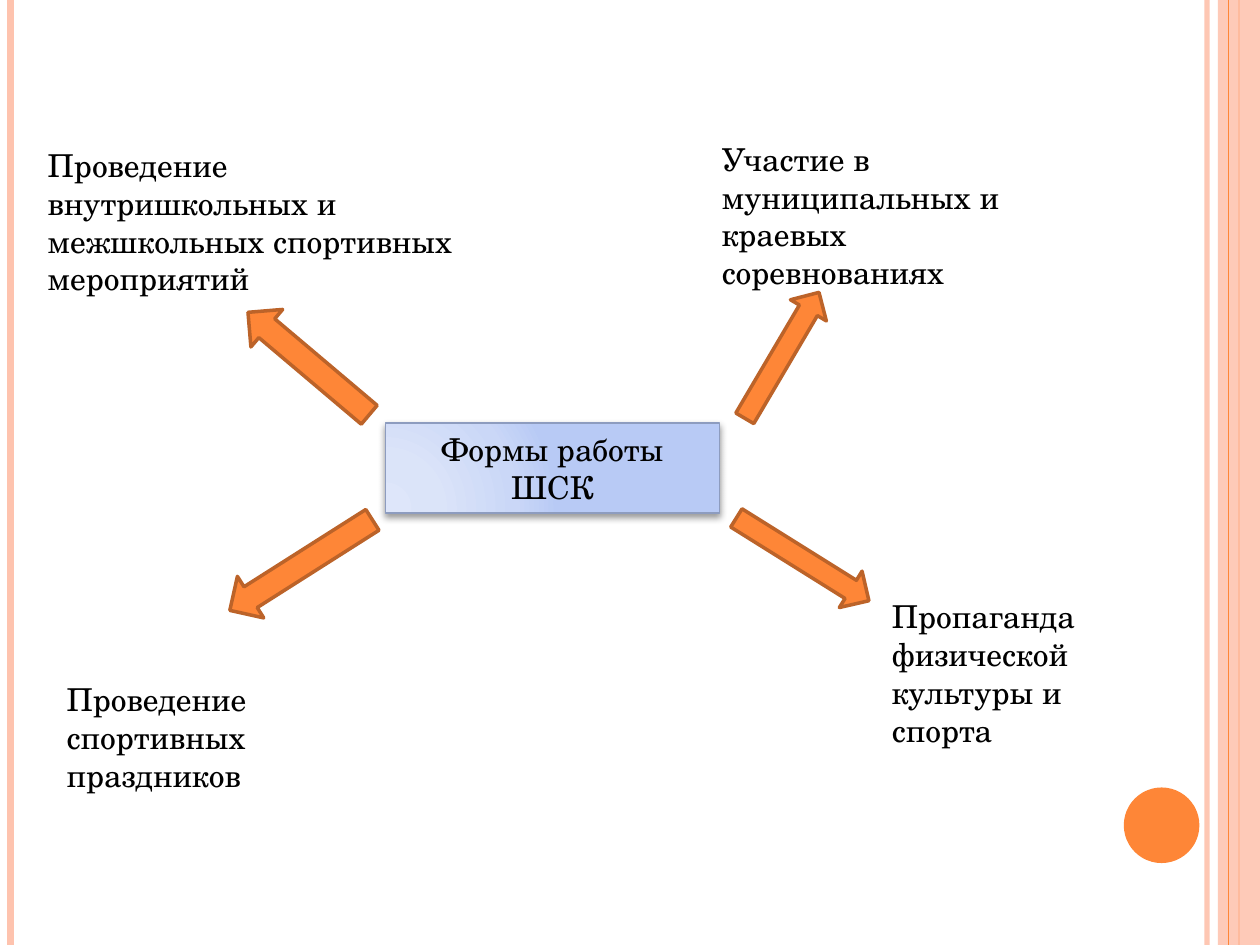
from lxml import etree
from pptx import Presentation
from pptx.dml.color import RGBColor
from pptx.enum.shapes import MSO_CONNECTOR, MSO_SHAPE
from pptx.enum.text import MSO_ANCHOR, MSO_AUTO_SIZE, PP_ALIGN
from pptx.oxml import parse_xml
from pptx.oxml.ns import nsdecls, qn
from pptx.util import Pt

LINE = MSO_CONNECTOR.STRAIGHT
RECT, OVAL = MSO_SHAPE.RECTANGLE, MSO_SHAPE.OVAL
RIGHT, DOWN = MSO_SHAPE.RIGHT_ARROW, MSO_SHAPE.DOWN_ARROW
MIDDLE, FIT = MSO_ANCHOR.MIDDLE, MSO_AUTO_SIZE.SHAPE_TO_FIT_TEXT
LEFT, CENTER = PP_ALIGN.LEFT, PP_ALIGN.CENTER

PINK = RGBColor(0xFE, 0xC3, 0xAE)
ORANGE = RGBColor(0xFE, 0x86, 0x37)
BROWN = RGBColor(0xBC, 0x63, 0x29)
STEEL = RGBColor(0x8D, 0x9C, 0xBF)
BLACK = RGBColor(0, 0, 0)
BLUES = [
    (0, RGBColor(0xDE, 0xE6, 0xFA)),
    (30, RGBColor(0xDB, 0xE4, 0xF9)),
    (75, RGBColor(0xCA, 0xD7, 0xF7)),
    (100, RGBColor(0xB8, 0xCA, 0xF5)),
]
FONT = "TeX Gyre Schola"
WIDTH, HEIGHT = 720, 540

# Left, top, width, height in points
TEXTS = [
    ("Участие в муниципальных и краевых соревнованиях",
     (405.4, 76.3, 195, 94.3)),
    ("Пропаганда физической культуры и спорта",
     (502.6, 337.7, 129.6, 94.3)),
    ("Проведение внутришкольных и межшкольных спортивных мероприятий",
     (20.2, 79.9, 254.9, 96.5)),
    ("Проведение спортивных праздников",
     (31, 385.2, 203.8, 72.7)),
]
# Kind, box, turn in degrees
ARROWS = [
    (RIGHT, (414, 307.4, 89.3, 24.5), 32),
    (DOWN, (434.9, 161.3, 23.8, 83.5), 210.5),
    (RIGHT, (131, 193.7, 90.7, 28.1), 220.2),
    (RIGHT, (123.8, 308.9, 96.5, 28.1), 147.6),
]


def set_alpha(node, percent):
    """Set the opacity of the first plain colour inside node."""
    color = next(node.iter(qn("a:srgbClr")))
    etree.SubElement(color, qn("a:alpha"), val=str(percent * 1000))


def add_rule(slide, x, color, width, alpha=None):
    """Draw a vertical line over the full slide height."""
    rule = slide.shapes.add_connector(LINE, Pt(x), Pt(0), Pt(x), Pt(HEIGHT))
    rule.line.color.rgb = color
    rule.line.width = Pt(width)
    props = rule._element.spPr
    if alpha:
        set_alpha(props, alpha)
    etree.SubElement(props, qn("a:effectLst"))


def add_shape(slide, kind, box, fill, edge=None, width=0, turn=0):
    shape = slide.shapes.add_shape(kind, *map(Pt, box))
    shape.shadow.inherit = False
    shape.rotation = turn
    shape.fill.solid()
    shape.fill.fore_color.rgb = fill
    if edge is None:
        shape.line.fill.background()
    else:
        shape.line.color.rgb = edge
        shape.line.width = Pt(width)
    return shape


def write(shape, text, align):
    frame = shape.text_frame
    frame.word_wrap = True
    frame.auto_size = FIT
    para = frame.paragraphs[0]
    para.alignment = align
    run = para.add_run()
    run.text = text
    run.font.size = Pt(18)
    run.font.name = FONT
    run.font.color.rgb = BLACK


def add_text(slide, text, box):
    write(slide.shapes.add_textbox(*map(Pt, box)), text, LEFT)


def add_center(slide):
    """Add the middle box with its round gradient and soft shadow."""
    box = add_shape(slide, RECT, (220.3, 241.9, 190.8, 51.1),
                    BLUES[-1][1], STEEL, 1)
    stops = "".join(
        f'<a:gs pos="{pos * 1000}"><a:srgbClr val="{color}"/></a:gs>'
        for pos, color in BLUES)
    grad = parse_xml(
        f'<a:gradFill {nsdecls("a")} rotWithShape="1">'
        f'<a:gsLst>{stops}</a:gsLst><a:path path="circle">'
        '<a:fillToRect l="5000" t="100000" r="120000" b="10000"/>'
        '</a:path></a:gradFill>')
    props = box._element.spPr
    props.replace(props.find(qn("a:solidFill")), grad)
    shade = parse_xml(
        f'<a:outerShdw {nsdecls("a")} blurRad="{Pt(4)}" dist="{Pt(2)}" '
        'dir="5400000" rotWithShape="0"><a:srgbClr val="000000">'
        '<a:alpha val="40000"/></a:srgbClr></a:outerShdw>')
    props.find(qn("a:effectLst")).append(shade)
    box.text_frame.vertical_anchor = MIDDLE
    write(box, "Формы работы ШСК", CENTER)


def add_frame(slide):
    """Add the side stripes and the corner disc."""
    add_rule(slide, 689.8, PINK, 3, 93)
    add_rule(slide, 6, PINK, 4.5)
    add_rule(slide, 708, ORANGE, 1.5)
    band = add_shape(slide, RECT, (696, 0, 24, HEIGHT), PINK)
    set_alpha(band._element.spPr, 87)
    add_rule(slide, 702, ORANGE, 0.75)
    add_shape(slide, OVAL, (642.2, 450, 43.2, 43.2), ORANGE)


def main():
    deck = Presentation()
    deck.slide_width, deck.slide_height = Pt(WIDTH), Pt(HEIGHT)
    slide = deck.slides.add_slide(deck.slide_layouts[6])
    add_frame(slide)
    add_center(slide)
    for kind, box, turn in ARROWS:
        add_shape(slide, kind, box, ORANGE, BROWN, 2, turn)
    for text, box in TEXTS:
        add_text(slide, text, box)
    deck.save("out.pptx")


if __name__ == "__main__":
    main()
